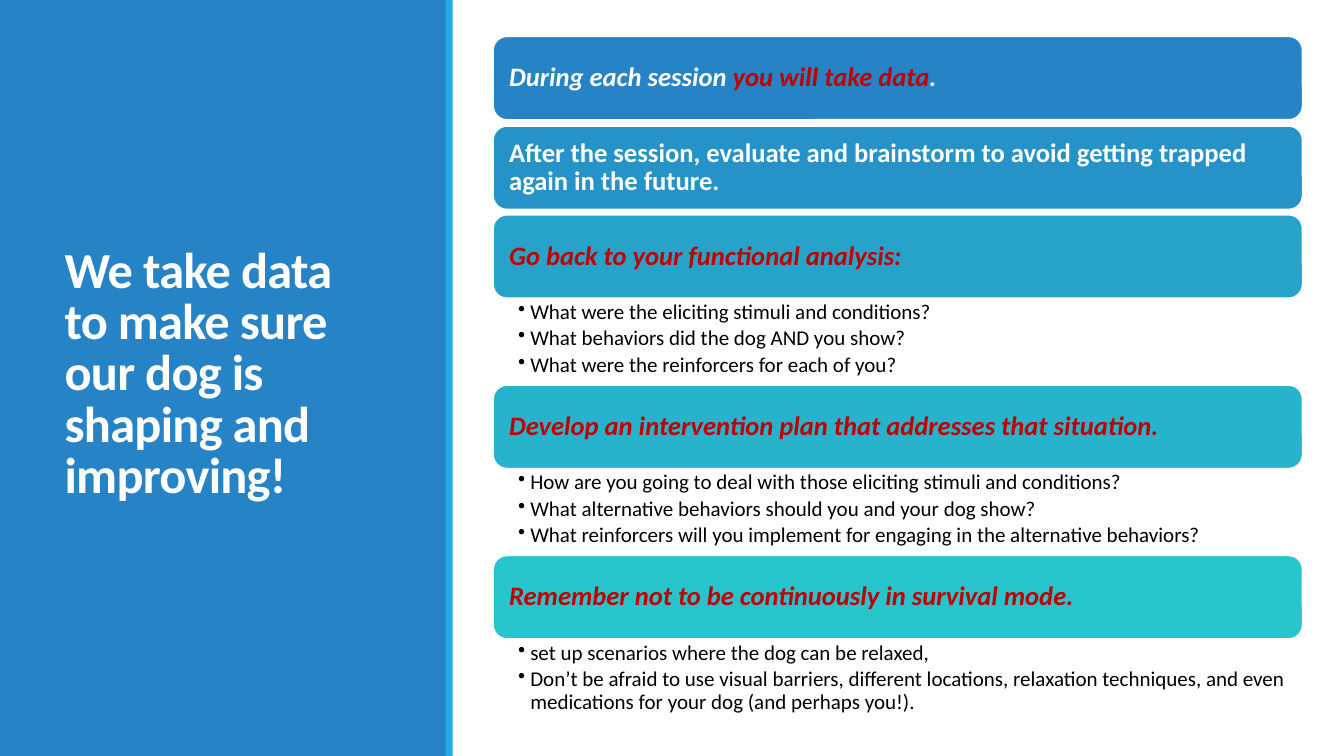
from dataclasses import dataclass

from lxml.etree import SubElement
from pptx import Presentation
from pptx.dml.color import RGBColor
from pptx.enum.shapes import MSO_SHAPE
from pptx.enum.text import MSO_ANCHOR, PP_ALIGN
from pptx.oxml.ns import qn
from pptx.util import Inches, Pt

FONT = "Calibri"
WHITE, BLACK, RED = "FFFFFF", "000000", "C00000"
BLUE, CYAN = "2683C6", "1CADE4"
LIST_LEFT, LIST_WIDTH, HEADING_HEIGHT = 4.89, 8.03, 0.83


@dataclass(frozen=True)
class Part:
    text: str
    color: str = RED


@dataclass(frozen=True)
class Step:
    top: float
    fill: str
    heading: tuple[Part, ...]
    italic: bool = True
    bullets: tuple[str, ...] = ()


STEPS = (
    Step(0.36, BLUE, (Part("During each session ", WHITE),
                      Part("you will take data"), Part(".", WHITE))),
    Step(1.25, "2693C8",
         (Part("After the session, evaluate and brainstorm to avoid getting "
               "trapped again in the future.", WHITE),), italic=False),
    Step(2.13, "27A3C9", (Part("Go back to your functional analysis:"),),
         bullets=("What were the eliciting stimuli and conditions?",
                  "What behaviors did the dog AND you show?",
                  "What were the reinforcers for each of you?")),
    Step(3.82, "27B3CB",
         (Part("Develop an intervention plan that addresses that situation."),),
         bullets=("How are you going to deal with those eliciting stimuli and conditions?",
                  "What alternative behaviors should you and your dog show?",
                  "What reinforcers will you implement for engaging in the "
                  "alternative behaviors?")),
    Step(5.51, "28C4CC",
         (Part("Remember not to be continuously in survival mode."),),
         bullets=("set up scenarios where the dog can be relaxed,",
                  "Don’t be afraid to use visual barriers, different locations, "
                  "relaxation techniques, and even medications for your dog "
                  "(and perhaps you!).")),
)


def rgb(color: str) -> RGBColor:
    return RGBColor.from_string(color)


def format_run(r, size: float, color: str, bold: bool = False,
               italic: bool = False) -> None:
    r.font.name, r.font.size = FONT, Pt(size)
    r.font.bold, r.font.italic = bold, italic
    r.font.color.rgb = rgb(color)


def set_frame(tf, left: float, top: float, right: float, bottom: float,
              anchor: MSO_ANCHOR) -> None:
    tf.word_wrap = True
    tf.margin_left, tf.margin_top = Inches(left), Inches(top)
    tf.margin_right, tf.margin_bottom = Inches(right), Inches(bottom)
    tf.vertical_anchor = anchor


def add_block(s, kind: MSO_SHAPE, left: float, top: float, width: float,
              height: float, fill: str):
    sp = s.shapes.add_shape(kind, Inches(left), Inches(top),
                            Inches(width), Inches(height))
    sp.shadow.inherit = False
    sp.fill.solid()
    sp.fill.fore_color.rgb = rgb(fill)
    sp.line.fill.background()
    return sp


def add_heading(s, step: Step) -> None:
    sp = add_block(s, MSO_SHAPE.ROUNDED_RECTANGLE, LIST_LEFT, step.top,
                   LIST_WIDTH, HEADING_HEIGHT, step.fill)
    sp.line.color.rgb = rgb(WHITE)
    sp.line.width = Pt(1.25)
    set_frame(sp.text_frame, 0.12, 0.12, 0.12, 0.12, MSO_ANCHOR.MIDDLE)
    p = sp.text_frame.paragraphs[0]
    p.alignment, p.line_spacing = PP_ALIGN.LEFT, 0.9
    for part in step.heading:
        r = p.add_run()
        r.text = part.text
        format_run(r, 19, part.color, bold=True, italic=step.italic)


def add_bullets(s, step: Step) -> None:
    sp = s.shapes.add_textbox(Inches(LIST_LEFT), Inches(step.top + HEADING_HEIGHT),
                              Inches(LIST_WIDTH), Inches(0.86))
    tf = sp.text_frame
    set_frame(tf, 0.25, 0.03, 0.15, 0.03, MSO_ANCHOR.TOP)
    tf.text = "\n".join(step.bullets)
    for p in tf.paragraphs:
        p.line_spacing, p.space_after = 0.9, Pt(2.6)
        format_run(p.runs[0], 15, BLACK)
        # Bullet with a hanging indent
        pPr = p._p.get_or_add_pPr()
        pPr.set("marL", str(Inches(0.12)))
        pPr.set("indent", str(-Inches(0.12)))
        SubElement(pPr, qn("a:buChar")).set("char", "•")


def add_title(s) -> None:
    sp = s.shapes.title
    sp.left, sp.top = Inches(0.54), Inches(0.57)
    sp.width, sp.height = Inches(3.37), Inches(6.31)
    tf = sp.text_frame
    set_frame(tf, 0.1, 0.05, 0.1, 0.05, MSO_ANCHOR.MIDDLE)
    tf.text = "We take data to make sure our dog is shaping and improving!"
    p = tf.paragraphs[0]
    p.alignment, p.line_spacing = PP_ALIGN.LEFT, 0.85
    r = p.runs[0]
    format_run(r, 36, WHITE, bold=True)
    r._r.get_or_add_rPr().set("spc", "-50")


def main() -> None:
    prs = Presentation()
    prs.slide_width, prs.slide_height = Inches(13.33), Inches(7.5)
    s = prs.slides.add_slide(prs.slide_layouts.get_by_name("Title Only"))

    # Side panel and title, with the title in front
    add_block(s, MSO_SHAPE.RECTANGLE, 0, 0, 4.43, 7.5, BLUE)
    add_block(s, MSO_SHAPE.RECTANGLE, 4.42, 0, 0.07, 7.5, CYAN)
    add_title(s)
    s.shapes._spTree.append(s.shapes.title._element)

    # Steps with their questions
    for step in STEPS:
        add_heading(s, step)
        if step.bullets:
            add_bullets(s, step)

    prs.save("out.pptx")


if __name__ == "__main__":
    main()
